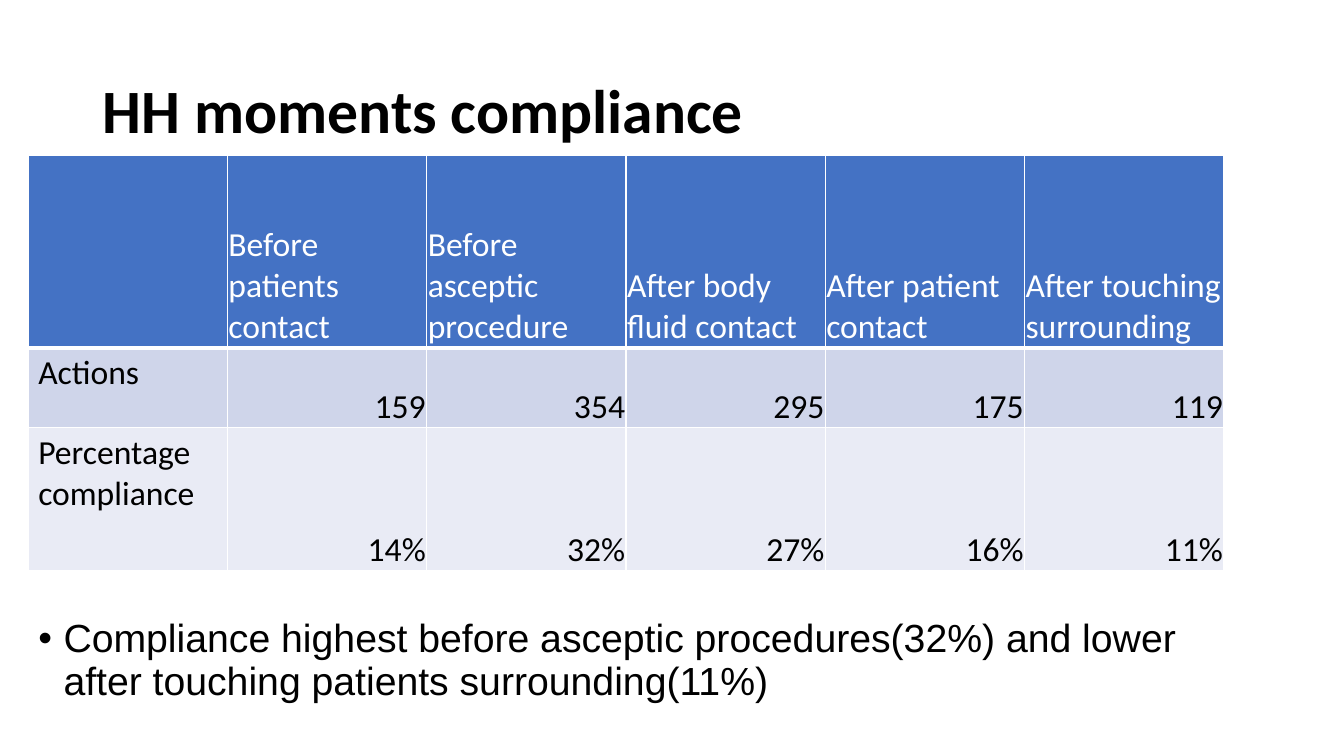
from lxml import etree
from pptx import Presentation
from pptx.dml.color import RGBColor
from pptx.enum import text
from pptx.oxml import ns
from pptx.util import Inches, Pt

COLORS = {
    "text": "000000",
    "white": "FFFFFF",
    "header": "4472C4",
    "actions": "CFD5EA",
    "compliance": "E9EBF5",
}
ROWS = [
    ("header", 1.91, ["", "Before patients contact", "Before asceptic procedure",
                      "After body fluid contact", "After patient contact",
                      "After touching surrounding"]),
    ("actions", 0.79, ["Actions", "159", "354", "295", "175", "119"]),
    ("compliance", 1.42, ["Percentage compliance", "14%", "32%", "27%", "16%", "11%"]),
]


def add_span(para, words, size, font, color, bold=False):
    span = para.add_run()
    span.text = words
    span.font.size = Pt(size)
    span.font.name = font
    span.font.bold = bold
    span.font.color.rgb = RGBColor.from_string(COLORS[color])


def add_border(cell, side, width):
    line = etree.SubElement(cell._tc.get_or_add_tcPr(), ns.qn("a:" + side), w=str(Pt(width)))
    fill = etree.SubElement(line, ns.qn("a:solidFill"))
    etree.SubElement(fill, ns.qn("a:srgbClr"), val=COLORS["white"])


deck = Presentation()
deck.slide_width = Inches(13.33)
deck.slide_height = Inches(7.5)
page = deck.slides.add_slide(deck.slide_layouts[1])

title = page.shapes.title
title.left, title.top = Inches(0.92), Inches(0.4)
title.width, title.height = Inches(11.5), Inches(1.45)
title.text_frame.vertical_anchor = text.MSO_ANCHOR.MIDDLE
title.text_frame.auto_size = text.MSO_AUTO_SIZE.NONE
para = title.text_frame.paragraphs[0]
para.alignment = text.PP_ALIGN.LEFT
para.line_spacing = 0.9
add_span(para, "HH moments compliance", 44, "Calibri", "text", True)

frame = page.shapes.add_table(3, 6, Inches(0.28), Inches(1.54), Inches(11.86), Inches(4.12))
table = frame.table
for column in table.columns:
    column.width = Inches(11.86 / 6)

for r, (fill, height, labels) in enumerate(ROWS):
    table.rows[r].height = Inches(height)
    for c, label in enumerate(labels):
        cell = table.cell(r, c)
        add_border(cell, "lnL", 1)
        add_border(cell, "lnR", 1)
        add_border(cell, "lnT", 3 if r == 1 else 1)
        add_border(cell, "lnB", 3 if r == 0 else 1)
        cell.fill.solid()
        cell.fill.fore_color.rgb = RGBColor.from_string(COLORS[fill])
        para = cell.text_frame.paragraphs[0]
        if c > 0:
            cell.vertical_anchor = text.MSO_ANCHOR.BOTTOM
            cell.margin_left = cell.margin_right = cell.margin_top = Inches(0.01)
            cell.margin_bottom = 0
            para.alignment = text.PP_ALIGN.RIGHT if r > 0 else text.PP_ALIGN.LEFT
        if label:
            add_span(para, label, 24, "Calibri", "white" if r == 0 else "text")

body = page.placeholders[1]
body.left, body.top = Inches(0.28), Inches(6.09)
body.width, body.height = Inches(11.86), Inches(1.3)
body.text_frame.auto_size = text.MSO_AUTO_SIZE.NONE
para = body.text_frame.paragraphs[0]
para.line_spacing = 0.9
para.space_before = Pt(0)
props = para._p.get_or_add_pPr()
props.set("marL", str(Inches(0.25)))
props.set("indent", str(Inches(-0.25)))
etree.SubElement(props, ns.qn("a:buFont"), typeface="Arial")
etree.SubElement(props, ns.qn("a:buChar"), char="•")
add_span(para, "Compliance highest before asceptic procedures(32%) and lower "
               "after touching patients surrounding(11%)", 28, "Arial", "text")

deck.save("out.pptx")
